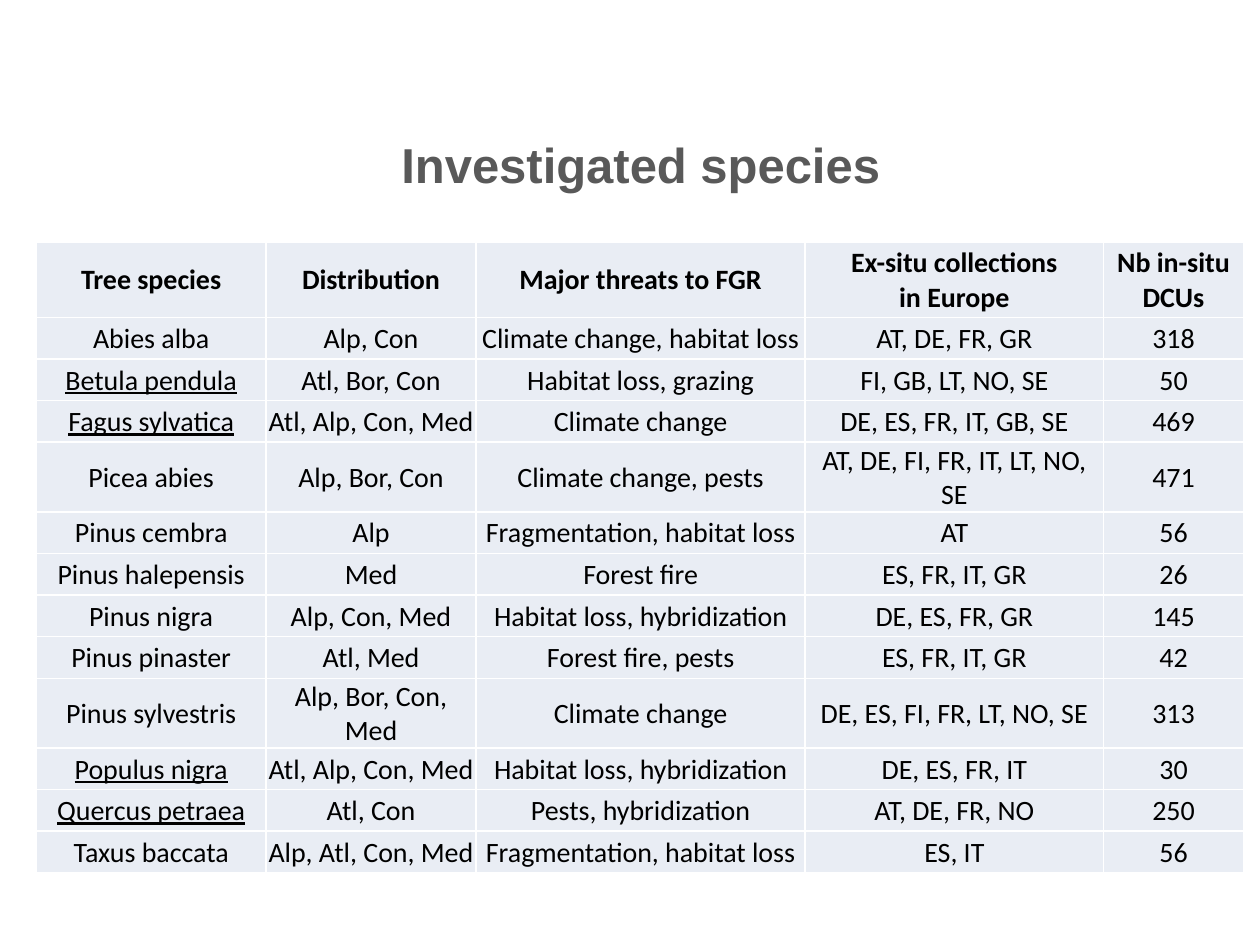
from dataclasses import dataclass

from lxml import etree
from pptx import Presentation
from pptx.dml.color import RGBColor
from pptx.enum.text import MSO_ANCHOR, PP_ALIGN
from pptx.oxml.ns import qn
from pptx.slide import Slide
from pptx.table import _Cell
from pptx.text.text import _Paragraph
from pptx.util import Inches, Pt

CENTER = PP_ALIGN.CENTER
MIDDLE = MSO_ANCHOR.MIDDLE
TOP = MSO_ANCHOR.TOP

COLUMN_WIDTHS = (1.82, 1.67, 2.61, 2.37, 1.11)
HEADER_HEIGHT = 0.6
SPECIES_HEIGHT = 0.33
HEADINGS = (
    "Tree species",
    "Distribution",
    "Major threats to FGR",
    "Ex-situ collections\nin Europe",
    "Nb in-situ DCUs",
)


@dataclass(frozen=True)
class Species:
    """One investigated tree species."""

    name: str
    distribution: str
    threats: str
    collections: str
    units: int
    underlined: bool = False

    def values(self) -> tuple[str, ...]:
        """Return the texts of the species in column order."""
        return self.name, self.distribution, self.threats, self.collections, str(self.units)


INVESTIGATED = (
    Species("Abies alba", "Alp, Con", "Climate change, habitat loss", "AT, DE, FR, GR", 318),
    Species("Betula pendula", "Atl, Bor, Con", "Habitat loss, grazing", "FI, GB, LT, NO, SE", 50, True),
    Species("Fagus sylvatica", "Atl, Alp, Con, Med", "Climate change", "DE, ES, FR, IT, GB, SE", 469, True),
    Species("Picea abies", "Alp, Bor, Con", "Climate change, pests", "AT, DE, FI, FR, IT, LT, NO, SE", 471),
    Species("Pinus cembra", "Alp", "Fragmentation, habitat loss", "AT", 56),
    Species("Pinus halepensis", "Med", "Forest fire", "ES, FR, IT, GR", 26),
    Species("Pinus nigra", "Alp, Con, Med", "Habitat loss, hybridization", "DE, ES, FR, GR", 145),
    Species("Pinus pinaster", "Atl, Med", "Forest fire, pests", "ES, FR, IT, GR", 42),
    Species("Pinus sylvestris", "Alp, Bor, Con, Med", "Climate change", "DE, ES, FI, FR, LT, NO, SE", 313),
    Species("Populus nigra", "Atl, Alp, Con, Med", "Habitat loss, hybridization", "DE, ES, FR, IT", 30, True),
    Species("Quercus petraea", "Atl, Con", "Pests, hybridization", "AT, DE, FR, NO", 250, True),
    Species("Taxus baccata", "Alp, Atl, Con, Med", "Fragmentation, habitat loss", "ES, IT", 56),
)


def rgb(value: str) -> RGBColor:
    """Turn a hex string into a colour."""
    return RGBColor.from_string(value)


def add_text(
    paragraph: _Paragraph, text: str, font: str, size: int, color: str, bold: bool, underline: bool = False
) -> None:
    """Add centred text, one run for each line."""
    paragraph.alignment = CENTER
    for number, line in enumerate(text.split("\n")):
        if number:
            paragraph.add_line_break()
        run = paragraph.add_run()
        run.text = line
        run.font.name = font
        run.font.size = Pt(size)
        run.font.bold = bold
        run.font.underline = underline
        run.font.color.rgb = rgb(color)


def add_borders(cell: _Cell, color: str) -> None:
    """Draw a thin line on the four sides of a cell."""
    properties = cell._tc.get_or_add_tcPr()
    for side in ("a:lnL", "a:lnR", "a:lnT", "a:lnB"):
        line = etree.SubElement(properties, qn(side), w=str(Pt(1)))
        fill = etree.SubElement(line, qn("a:solidFill"))
        etree.SubElement(fill, qn("a:srgbClr"), val=color)


def fill_cell(cell: _Cell, text: str, bold: bool, underline: bool) -> None:
    """Format a table cell and write its text."""
    cell.margin_left = cell.margin_right = cell.margin_top = Inches(0.01)
    cell.margin_bottom = 0
    cell.vertical_anchor = MIDDLE
    add_borders(cell, "FFFFFF")
    cell.fill.solid()
    cell.fill.fore_color.rgb = rgb("E9EDF4")
    add_text(cell.text_frame.paragraphs[0], text, "Calibri", 16, "000000", bold, underline)


def add_title(slide: Slide, text: str) -> None:
    """Place and write the slide title."""
    title = slide.shapes.title
    title.left, title.top = Inches(1.03), Inches(0.97)
    title.width, title.height = Inches(8.11), Inches(0.86)
    frame = title.text_frame
    frame.vertical_anchor = TOP
    frame.margin_top = Inches(0.1)
    add_text(frame.paragraphs[0], text, "Arial", 28, "595959", True)


def add_species_table(slide: Slide, species_list: tuple[Species, ...]) -> None:
    """Draw the table with a heading row and a row for each species."""
    height = HEADER_HEIGHT + SPECIES_HEIGHT * len(species_list)
    table = slide.shapes.add_table(
        len(species_list) + 1, len(HEADINGS),
        Inches(0.29), Inches(1.92), Inches(sum(COLUMN_WIDTHS)), Inches(height),
    ).table
    table.first_row = table.horz_banding = False
    for column, width in zip(table.columns, COLUMN_WIDTHS):
        column.width = Inches(width)
    for number, row in enumerate(table.rows):
        row.height = Inches(SPECIES_HEIGHT if number else HEADER_HEIGHT)
    for column, heading in enumerate(HEADINGS):
        fill_cell(table.cell(0, column), heading, True, False)
    for row, species in enumerate(species_list, start=1):
        for column, value in enumerate(species.values()):
            fill_cell(table.cell(row, column), value, False, species.underlined and column == 0)


def main() -> None:
    """Build and save the slide."""
    presentation = Presentation()
    presentation.slide_width, presentation.slide_height = Inches(10), Inches(7.5)
    slide = presentation.slides.add_slide(presentation.slide_layouts.get_by_name("Title Only"))
    add_title(slide, "Investigated species")
    add_species_table(slide, INVESTIGATED)
    presentation.save("out.pptx")


if __name__ == "__main__":
    main()
